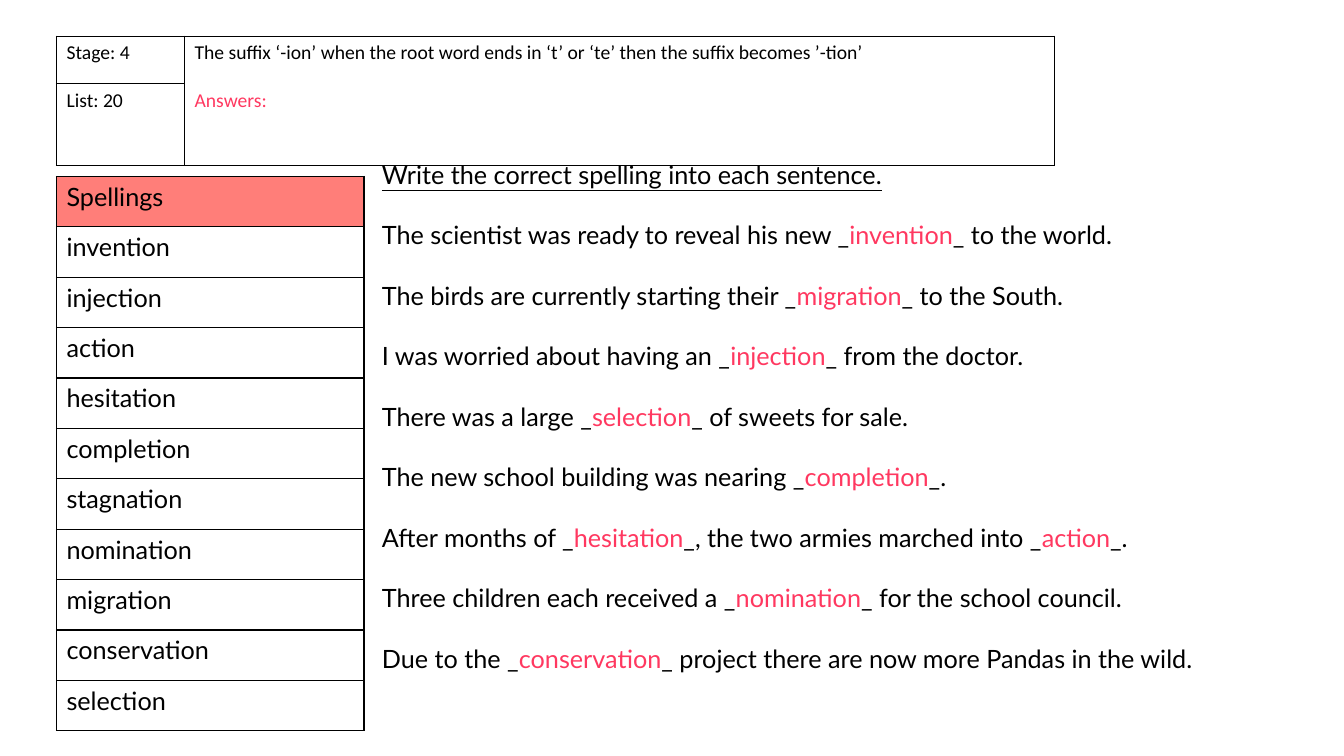
from dataclasses import dataclass

from lxml import etree
from pptx import Presentation
from pptx import util as u
from pptx.dml.color import RGBColor
from pptx.enum import text
from pptx.oxml import ns


@dataclass(frozen=True)
class Theme:
    ink: str = "000000"
    answer: str = "FF3860"
    heading_fill: str = "FF7E79"
    list_font: str = "Lato"
    header_font: str = "Calibri"
    list_size: float = 18
    header_size: float = 14
    list_gap: float = 21.6
    header_gap: float = 17.1
    border: float = 1


THEME = Theme()
LEFT = 0.56
WORDS = ["invention", "injection", "action", "hesitation", "completion",
         "stagnation", "nomination", "migration", "conservation", "selection"]
# Answers stand between underscores
SENTENCES = [
    "The scientist was ready to reveal his new _invention_ to the world.",
    "The birds are currently starting their _migration_ to the South.",
    "I was worried about having an _injection_ from the doctor.",
    "There was a large _selection_ of sweets for sale.",
    "The new school building was nearing _completion_.",
    "After months of _hesitation_, the two armies marched into _action_.",
    "Three children each received a _nomination_ for the school council.",
    "Due to the _conservation_ project there are now more Pandas in the wild.",
]


def style(paragraph, font, size, color=THEME.ink):
    paragraph.font.name = font
    paragraph.font.size = u.Pt(size)
    paragraph.font.bold = False
    paragraph.font.color.rgb = RGBColor.from_string(color)


def add_border(cell):
    properties = cell._tc.get_or_add_tcPr()
    for index, side in enumerate(("a:lnL", "a:lnR", "a:lnT", "a:lnB")):
        line = etree.Element(ns.qn(side), w=str(u.Pt(THEME.border)))
        fill = etree.SubElement(line, ns.qn("a:solidFill"))
        etree.SubElement(fill, ns.qn("a:srgbClr"), val=THEME.ink)
        properties.insert(index, line)


def add_grid(slide, left, top, columns, rows):
    """Add a plain ruled table with the given column widths and row heights."""
    frame = slide.shapes.add_table(
        len(rows), len(columns), u.Inches(left), u.Inches(top),
        u.Inches(sum(columns)), u.Inches(sum(rows)))
    table = frame.table
    table.first_row = table.horz_banding = False
    for column, width in zip(table.columns, columns):
        column.width = u.Inches(width)
    for row, height in zip(table.rows, rows):
        row.height = u.Inches(height)
        for cell in row.cells:
            cell.fill.background()
            add_border(cell)
    return table


def add_header(slide, left, top, width, height):
    stage_width, stage_height = 1.27, 0.47
    table = add_grid(slide, left, top, [stage_width, width - stage_width],
                     [stage_height, height - stage_height])
    rule_cell = table.cell(0, 1)
    rule_cell.merge(table.cell(1, 1))
    table.cell(0, 0).text = "Stage: 4"
    table.cell(1, 0).text = "List: 20"
    rule_cell.text = ("The suffix ‘-ion’ when the root word ends in ‘t’ or ‘te’ "
                      "then the suffix becomes ’-tion’\nAnswers:")
    for cell in (table.cell(0, 0), table.cell(1, 0), rule_cell):
        for paragraph in cell.text_frame.paragraphs:
            style(paragraph, THEME.header_font, THEME.header_size)
    answers = rule_cell.text_frame.paragraphs[1]
    answers.space_before = u.Pt(THEME.header_gap)
    answers.font.color.rgb = RGBColor.from_string(THEME.answer)


def add_spellings(slide, left, top, width, height):
    entries = ["Spellings", *WORDS]
    table = add_grid(slide, left, top, [width],
                     [height / len(entries)] * len(entries))
    for index, entry in enumerate(entries):
        cell = table.cell(index, 0)
        cell.text = entry
        style(cell.text_frame.paragraphs[0], THEME.list_font, THEME.list_size)
    heading = table.cell(0, 0)
    heading.fill.solid()
    heading.fill.fore_color.rgb = RGBColor.from_string(THEME.heading_fill)


def add_sentences(slide, left, top, width, height):
    box = slide.shapes.add_textbox(*map(u.Inches, (left, top, width, height)))
    frame = box.text_frame
    frame.word_wrap = True
    frame.vertical_anchor = text.MSO_ANCHOR.TOP
    instruction = frame.paragraphs[0]
    instruction.text = "Write the correct spelling into each sentence."
    style(instruction, THEME.list_font, THEME.list_size)
    instruction.font.underline = True
    for sentence in SENTENCES:
        paragraph = frame.add_paragraph()
        paragraph.space_before = u.Pt(THEME.list_gap)
        style(paragraph, THEME.list_font, THEME.list_size)
        parts = sentence.split("_")
        for index, part in enumerate(parts):
            run = paragraph.add_run()
            if index % 2:
                run.text = part
                run.font.color.rgb = RGBColor.from_string(THEME.answer)
            else:
                opening = "_" if index > 0 else ""
                closing = "_" if index < len(parts) - 1 else ""
                run.text = opening + part + closing


def main():
    presentation = Presentation()
    presentation.slide_width = u.Inches(13.33)
    presentation.slide_height = u.Inches(7.5)
    slide = presentation.slides.add_slide(presentation.slide_layouts[6])
    add_spellings(slide, LEFT, 1.75, 3.05, 5.5)
    add_header(slide, LEFT, 0.36, 9.9, 1.28)
    add_sentences(slide, 3.69, 1.53, 9.64, 5.86)
    presentation.save("out.pptx")


if __name__ == "__main__":
    main()
